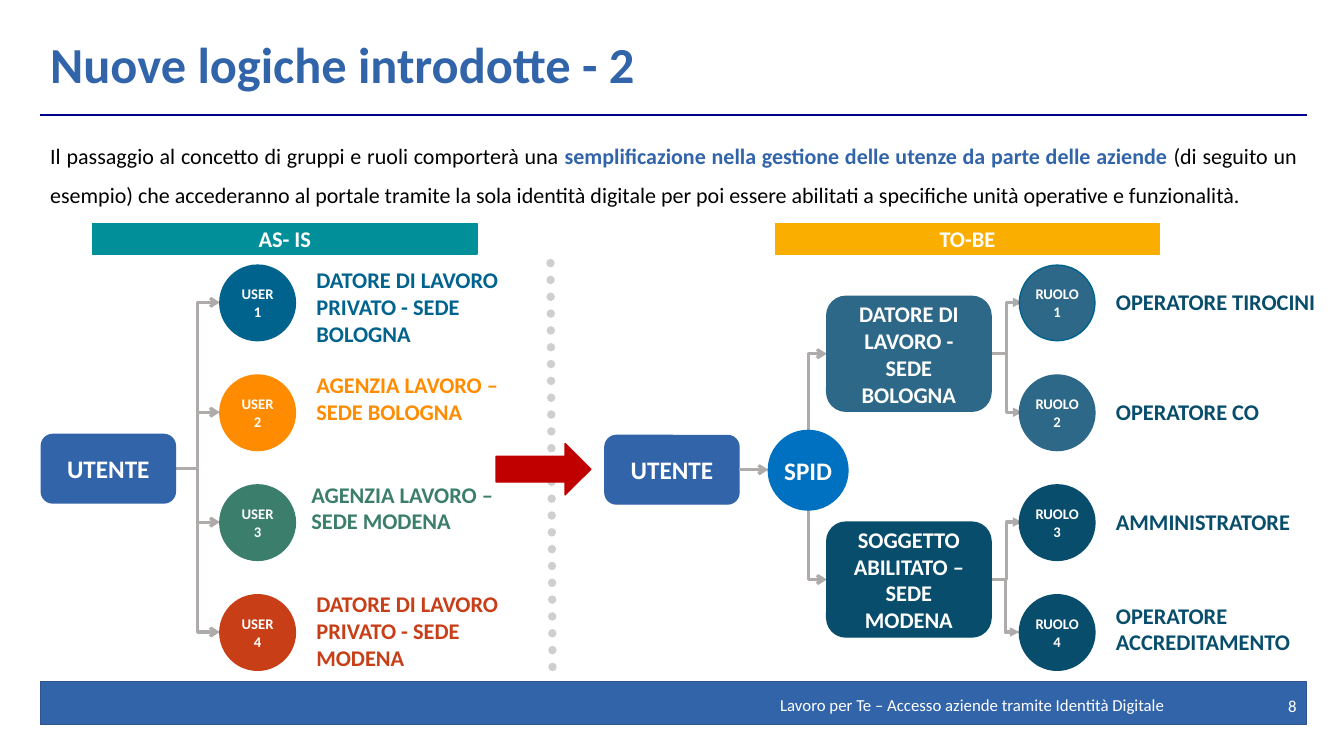
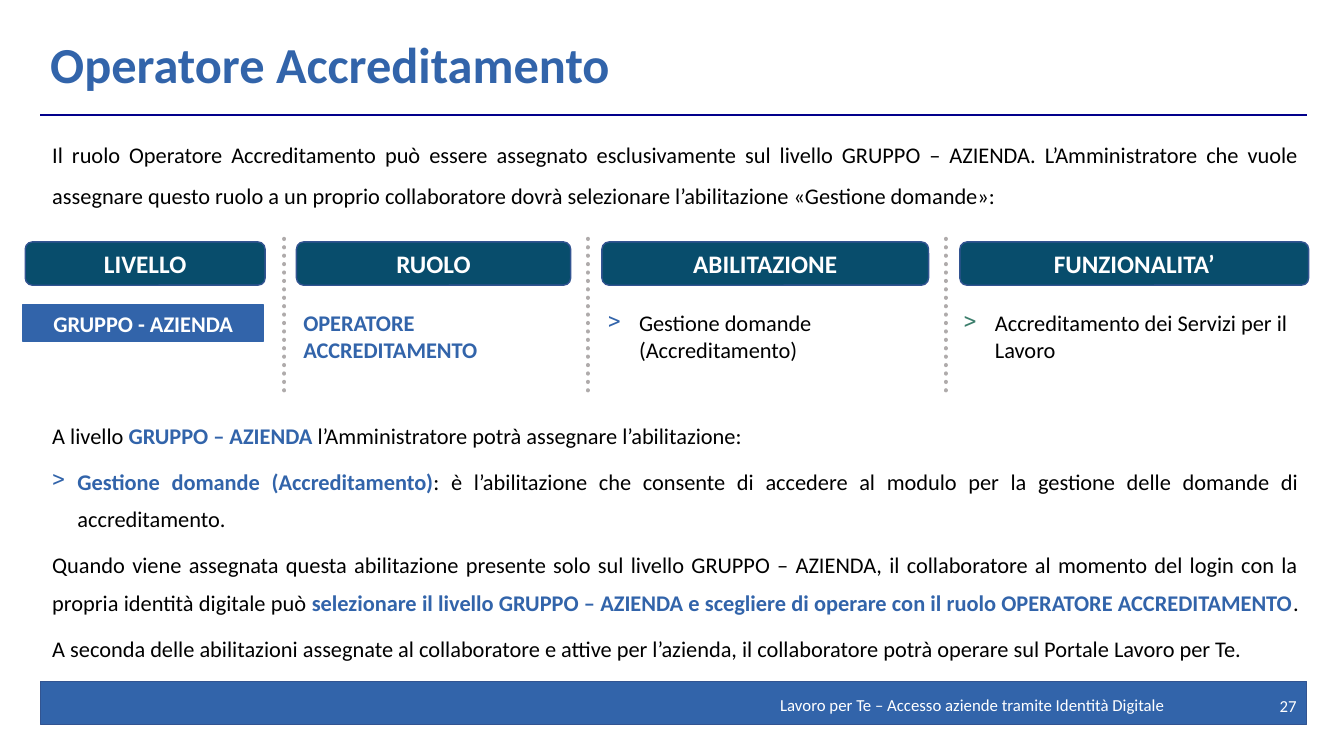
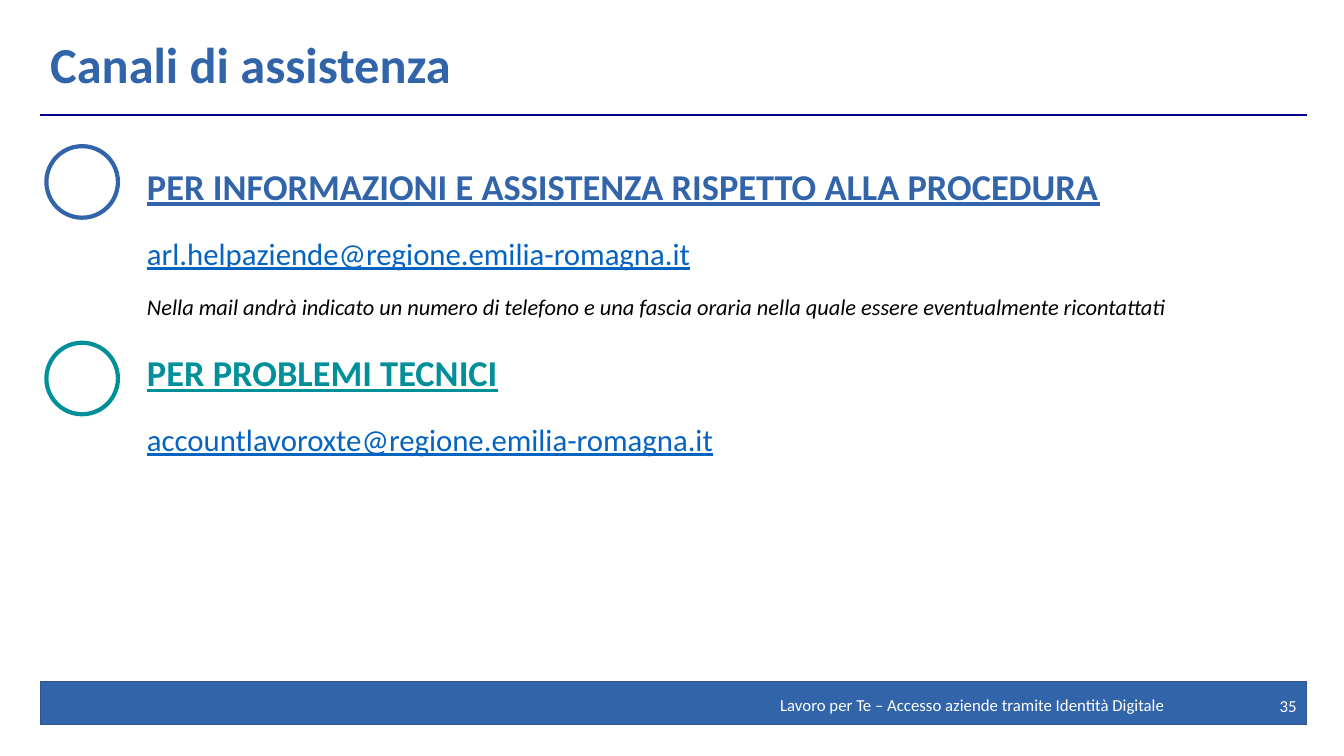
from lxml import etree
from pptx import Presentation
from pptx.dml.color import RGBColor
from pptx.enum.dml import MSO_LINE
from pptx.enum.shapes import MSO_CONNECTOR, MSO_SHAPE
from pptx.enum.text import MSO_ANCHOR, PP_ALIGN
from pptx.oxml.ns import qn
from pptx.util import Pt

PX = 9144
FONT = "Calibri"
RECT, ROUND, OVAL, ARROW = (MSO_SHAPE.RECTANGLE, MSO_SHAPE.ROUNDED_RECTANGLE,
                            MSO_SHAPE.OVAL, MSO_SHAPE.RIGHT_ARROW)
STRAIGHT, ELBOW = MSO_CONNECTOR.STRAIGHT, MSO_CONNECTOR.ELBOW
LEFT, CENTER, RIGHT, JUSTIFY = (PP_ALIGN.LEFT, PP_ALIGN.CENTER,
                                PP_ALIGN.RIGHT, PP_ALIGN.JUSTIFY)
TOP, MIDDLE = MSO_ANCHOR.TOP, MSO_ANCHOR.MIDDLE
DOTS = MSO_LINE.ROUND_DOT

BLUE, EDGE, RULE = "3264AA", "325491", "02008B"
PETROL, STEEL, OCEAN, GREEN = "084D6C", "2D6888", "00638E", "3C7E6C"
TEAL, AMBER, LINK, RED = "018F99", "F9AE00", "0563C1", "C00000"
GREY, PALE, WHITE, BLACK = "AFABAB", "D0CECE", "FFFFFF", "000000"
STRONG = {"color": BLUE, "bold": True}

FOOTER = "Lavoro per Te – Accesso aziende tramite Identità Digitale"

LOGIC_TEXT = [[
    ("Il passaggio al concetto di gruppi e ruoli comporterà una ", {}),
    ("semplificazione nella gestione delle utenze da parte delle aziende ", STRONG),
    ("(di seguito un esempio) che accederanno al portale tramite la sola identità "
     "digitale per poi essere abilitati a specifiche unità operative e funzionalità.", {}),
]]
BANNERS = [(92, "AS- IS", TEAL), (769, "TO-BE", AMBER)]
USERS = [
    ("DATORE DI LAVORO PRIVATO - SEDE BOLOGNA", OCEAN, 304, 259, 91),
    ("AGENZIA LAVORO – SEDE BOLOGNA", "FF8C00", 304, 363, 64),
    ("AGENZIA LAVORO – SEDE MODENA", GREEN, 299, 472, 64),
    ("DATORE DI LAVORO PRIVATO - SEDE MODENA", "C73E17", 304, 581, 91),
]
ROLES = [
    ("OPERATORE TIROCINI", STEEL, OCEAN, 281, 37),
    ("OPERATORE CO", STEEL, STEEL, 390, 37),
    ("AMMINISTRATORE", PETROL, PETROL, 499, 37),
    ("OPERATORE ACCREDITAMENTO", PETROL, PETROL, 592, 64),
]
SITES = [
    ("DATORE DI LAVORO - SEDE BOLOGNA", STEEL, 294, 427, (1014, 1014)),
    ("SOGGETTO ABILITATO – SEDE MODENA", PETROL, 518, 505, (1014, 1011)),
]

ROLE_TEXT = ["Il ruolo Operatore Accreditamento può essere assegnato esclusivamente sul "
             "livello GRUPPO – AZIENDA. L’Amministratore che vuole assegnare questo ruolo "
             "a un proprio collaboratore dovrà selezionare l’abilitazione «Gestione domande»:"]
COLUMNS = [(25, 238, "LIVELLO"), (294, 272, "RUOLO"),
           (597, 324, "ABILITAZIONE"), (952, 346, "FUNZIONALITA’")]
DIVIDERS = [282, 583, 938]
BULLET_CELLS = [(593, 324, "Gestione domande (Accreditamento)", BLUE),
                (946, 364, "Accreditamento dei Servizi per il Lavoro", GREEN)]
DETAILS = [
    [("A livello ", {}), ("GRUPPO – AZIENDA ", STRONG),
     ("l’Amministratore potrà assegnare l’abilitazione:", {})],
    [("Gestione domande (Accreditamento)", STRONG),
     (": è l’abilitazione che consente di accedere al modulo per la gestione delle "
      "domande di accreditamento.", {})],
    [("Quando viene assegnata questa abilitazione presente solo sul livello GRUPPO – "
      "AZIENDA, il collaboratore al momento del login con la propria identità digitale può ", {}),
     ("selezionare il livello GRUPPO – AZIENDA e scegliere di operare con il ruolo "
      "OPERATORE ACCREDITAMENTO", STRONG), (". ", {})],
    "A seconda delle abilitazioni assegnate al collaboratore e attive per l’azienda, il "
    "collaboratore potrà operare sul Portale Lavoro per Te.",
]

HEADING = {"size": 26, "bold": True, "underline": True}
MAIL = {"size": 22, "color": LINK, "underline": True}
SUPPORT = [
    [("PER INFORMAZIONI E ASSISTENZA RISPETTO ALLA PROCEDURA", {**HEADING, "color": BLUE})],
    [("arl.helpaziende@regione.emilia-romagna.it", MAIL)],
    [("Nella mail andrà indicato un numero di telefono e una fascia oraria nella quale "
      "essere eventualmente ricontattati", {"italic": True})],
    [("PER PROBLEMI TECNICI", {**HEADING, "color": TEAL})],
    [("accountlavoroxte@regione.emilia-romagna.it", MAIL)],
]
RINGS = [(145, BLUE), (340, TEAL)]


def rgb(value):
    """Turn a hex string into a colour."""
    return RGBColor.from_string(value)


def px(*values):
    """Turn pixel lengths into EMU."""
    return [round(v * PX) for v in values]


def add_bullet(p, color, indent):
    """Give a paragraph a coloured > bullet with a hanging indent."""
    pPr = p._p.get_or_add_pPr()
    pPr.set("marL", str(indent * PX))
    pPr.set("indent", str(-indent * PX))
    clr = etree.SubElement(pPr, qn("a:buClr"))
    etree.SubElement(clr, qn("a:srgbClr"), val=color)
    etree.SubElement(pPr, qn("a:buChar"), char=">")


def write(sp, paras, size=16, color=BLACK, bold=False, align=LEFT, anchor=TOP,
          spacing=None, before=0, after=0, margin=10, bullets=None):
    """Fill a shape with paragraphs, each a string or a list of styled runs."""
    tf = sp.text_frame
    tf.word_wrap = True
    tf.vertical_anchor = anchor
    tf.margin_left, tf.margin_right, tf.margin_top, tf.margin_bottom = px(margin, margin, 5, 5)
    for i, runs in enumerate(paras):
        p = tf.add_paragraph() if i else tf.paragraphs[0]
        if bullets and i in bullets:
            add_bullet(p, *bullets[i])
        p.alignment = align
        if spacing:
            p.line_spacing = spacing
        p.space_before, p.space_after = Pt(before if i else 0), Pt(after)
        for text, style in [(runs, {})] if isinstance(runs, str) else runs:
            r = p.add_run()
            r.text = text
            font = r.font
            font.name = FONT
            font.size = Pt(style.get("size", size))
            font.bold = style.get("bold", bold)
            font.italic = style.get("italic", False)
            font.underline = style.get("underline", False)
            font.color.rgb = rgb(style.get("color", color))


def add_text(s, box, paras, **style):
    """Add a text box."""
    write(s.shapes.add_textbox(*px(*box)), paras, **style)


def add_box(s, kind, box, fill=None, line=None, width=1, text=None, size=16, margin=10):
    """Add a preset shape with optional centred white bold text."""
    sp = s.shapes.add_shape(kind, *px(*box))
    sp.shadow.inherit = False
    if fill:
        sp.fill.solid()
        sp.fill.fore_color.rgb = rgb(fill)
    else:
        sp.fill.background()
    sp.line.color.rgb = rgb(line or fill)
    sp.line.width = Pt(width)
    if text:
        write(sp, [text], size=size, color=WHITE, bold=True, align=CENTER,
              anchor=MIDDLE, margin=margin)
    return sp


def add_line(s, ends, color=GREY, width=2.25, kind=STRAIGHT, head=None, tail=None,
             dash=None, corner=False):
    """Add a line, elbow or single-corner connector."""
    c = s.shapes.add_connector(kind, *px(*ends))
    c.line.color.rgb = rgb(color)
    c.line.width = Pt(width)
    spPr = c._element.spPr
    if dash:
        c.line.dash_style = dash
        c.line._get_or_add_ln().set("cap", "rnd")
    if corner:
        spPr.find(qn("a:prstGeom")).set("prst", "bentConnector2")
    for tag, end in (("a:headEnd", head), ("a:tailEnd", tail)):
        if end:
            etree.SubElement(c.line._get_or_add_ln(), qn(tag), type=end)
    etree.SubElement(spPr, qn("a:effectLst"))
    return c


def add_page(prs, title, number):
    """Add a slide with the shared title, rule and footer band."""
    s = prs.slides.add_slide(prs.slide_layouts[6])
    add_box(s, RECT, (40, 676, 1256, 43), BLUE, EDGE)
    add_line(s, (40, 114, 1296, 114), RULE, 1)
    add_text(s, (40, 34, 1256, 65), [title], size=36, color=BLUE, bold=True,
             anchor=MIDDLE, spacing=0.9)
    for box, text in (((451, 679, 714, 40), FOOTER), ((1176, 680, 120, 40), str(number))):
        add_text(s, box, [text], size=12, color=WHITE, align=RIGHT, anchor=MIDDLE)
    return s


def build_logic(prs):
    """Compare the current and future access models."""
    s = add_page(prs, "Nuove logiche introdotte - 2", 8)
    add_text(s, (40, 123, 1256, 122), LOGIC_TEXT, size=15.7, align=JUSTIFY, spacing=1.5)
    for x, text, fill in BANNERS:
        add_box(s, RECT, (x, 222, 381, 30), fill, text=text)
    add_line(s, (546, 261, 548, 666), PALE, 6, dash=DOTS)

    tops = [263 + 109 * i for i in range(4)]
    mids = [top + 37 for top in tops]
    for i, (label, color, x, y, h) in enumerate(USERS):
        add_line(s, (174, 465, 218, mids[i]), kind=ELBOW, tail="arrow")
        add_box(s, OVAL, (218, tops[i], 75, 75), color, text=f"USER {i + 1}", size=10.5)
        add_text(s, (x, y, 220, h), [label], color=color, bold=True)
    add_box(s, ROUND, (41, 431, 133, 68), BLUE, text="UTENTE", size=18)

    for i, (text, fill, top, spid_edge, ends) in enumerate(SITES):
        mid = top + 57
        add_line(s, (820, mid, 802, spid_edge), kind=ELBOW, head="arrow", corner=True)
        for j, x in enumerate(ends):
            add_line(s, (983, mid, x, mids[2 * i + j]), kind=ELBOW, tail="triangle")
        add_box(s, ROUND, (820, top, 163, 114), fill, text=text)
    for i, (label, fill, line, y, h) in enumerate(ROLES):
        add_box(s, OVAL, (1011, tops[i], 75, 75), fill, line, text=f"RUOLO {i + 1}",
                size=10.5, margin=2)
        add_text(s, (1097, y, 220, h), [label], color=PETROL, bold=True)
    user = add_box(s, ROUND, (600, 432, 133, 68), BLUE, text="UTENTE", size=18)
    add_line(s, (733, 466, 762, 466), tail="arrow").begin_connect(user, 3)
    add_box(s, OVAL, (762, 427, 79, 79), "0070C0", text="SPID", size=18, margin=2)
    add_box(s, ARROW, (492, 440, 94, 51), RED)


def build_role(prs):
    """Explain the accreditation operator role."""
    s = add_page(prs, "Operatore Accreditamento", 27)
    add_text(s, (42, 122, 1256, 99), ROLE_TEXT, align=JUSTIFY, spacing=1.5)
    for x, w, text in COLUMNS:
        add_box(s, ROUND, (x, 240, w, 43), PETROL, EDGE, text=text, size=18)
    for x in DIVIDERS:
        add_line(s, (x, 237, x, 391), width=3, dash=DOTS)
    add_box(s, RECT, (23, 302, 238, 37), BLUE, text="GRUPPO - AZIENDA")
    add_text(s, (291, 302, 286, 64), ["OPERATORE ACCREDITAMENTO"], color=BLUE, bold=True)
    for x, w, text, color in BULLET_CELLS:
        add_text(s, (x, 302, w, 64), [text], bullets={0: (color, 31)})
    add_text(s, (42, 403, 1256, 271), DETAILS, align=JUSTIFY, spacing=1.4, before=6,
             bullets={1: (BLUE, 25)})


def build_support(prs):
    """List the support channels."""
    s = add_page(prs, "Canali di assistenza", 35)
    add_text(s, (136, 136, 1160, 497), SUPPORT, align=JUSTIFY, spacing=1.5,
             before=3, after=3)
    for y, color in RINGS:
        add_box(s, OVAL, (46, y, 71, 71), line=color, width=3)


def main():
    """Build and save the presentation."""
    prs = Presentation()
    prs.slide_width, prs.slide_height = px(1333, 750)
    build_logic(prs)
    build_role(prs)
    build_support(prs)
    prs.save("out.pptx")


if __name__ == "__main__":
    main()
